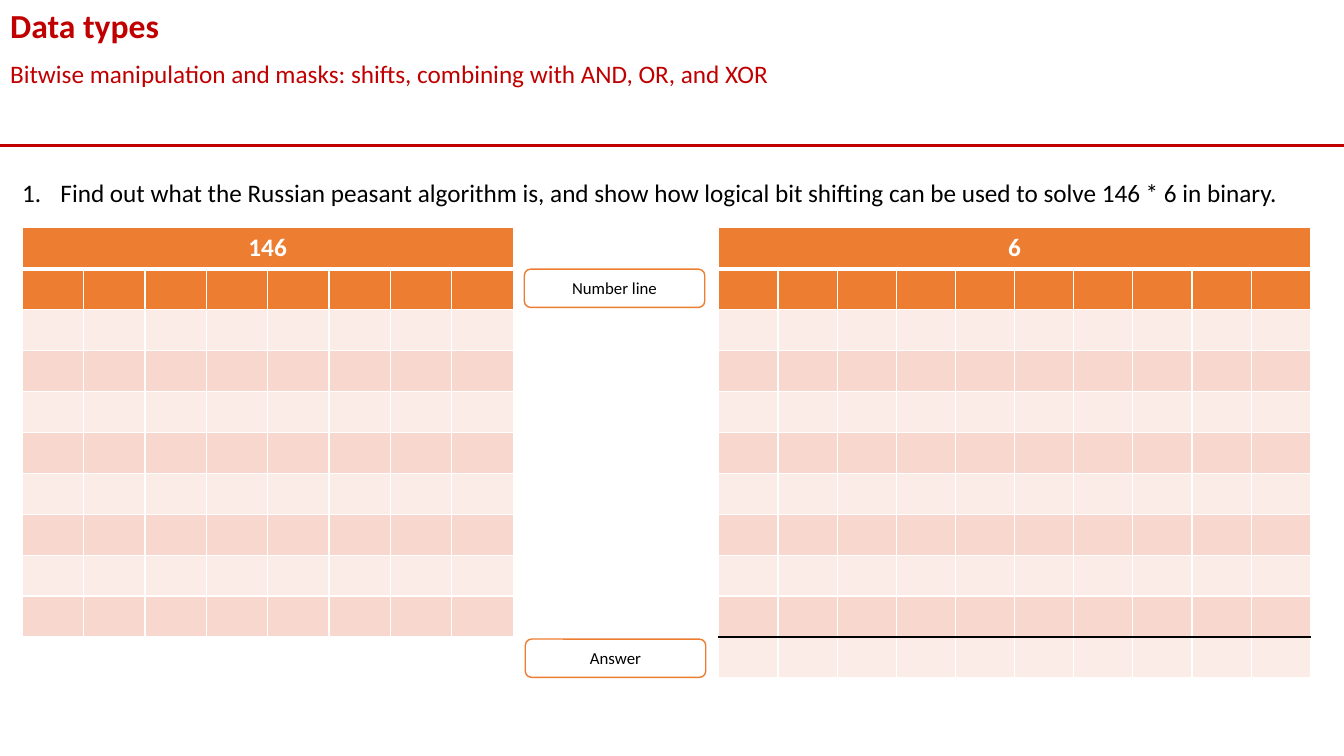
from lxml.etree import SubElement
from pptx import Presentation
from pptx.dml.color import RGBColor
from pptx.enum.shapes import MSO_CONNECTOR, MSO_SHAPE
from pptx.enum.text import MSO_ANCHOR, MSO_AUTO_SIZE, PP_ALIGN
from pptx.oxml.ns import qn
from pptx.util import Inches, Pt

COLORS = {
    "red": "C00000",
    "orange": "ED7D31",
    "light": "FCECE8",
    "dark": "F8D7CE",
    "white": "FFFFFF",
    "black": "000000",
}
FONT = "Calibri"
SLIDE_WIDTH = 13.33
ROW_HEIGHT = 0.406


def color(name):
    return RGBColor.from_string(COLORS[name])


def place(shape, box):
    shape.left, shape.top, shape.width, shape.height = map(Inches, box)


def style_font(paragraph, size, color_name, bold=False):
    paragraph.font.name = FONT
    paragraph.font.size = Pt(size)
    paragraph.font.bold = bold
    paragraph.font.color.rgb = color(color_name)


def fill_placeholder(placeholder, box, text, size, color_name, bold=False, numbered=False):
    place(placeholder, box)
    frame = placeholder.text_frame
    frame.text = text
    frame.word_wrap = True
    frame.auto_size = MSO_AUTO_SIZE.NONE
    frame.vertical_anchor = MSO_ANCHOR.TOP
    paragraph = frame.paragraphs[0]
    paragraph.alignment = PP_ALIGN.LEFT
    paragraph.space_before = Pt(0)
    properties = paragraph._p.get_or_add_pPr()
    indent = Inches(0.38) if numbered else 0
    properties.set("marL", str(indent))
    properties.set("indent", str(-indent))
    if numbered:
        SubElement(properties, qn("a:buFont"), typeface="+mj-lt")
        SubElement(properties, qn("a:buAutoNum"), type="arabicPeriod")
    else:
        SubElement(properties, qn("a:buNone"))
    style_font(paragraph, size, color_name, bold)


def add_header(slide, box):
    left, top, width, height = box
    title, subtitle = slide.shapes.title, slide.placeholders[1]
    fill_placeholder(title, (left, top, width, 0.5), "Data types", 24, "red", bold=True)
    fill_placeholder(
        subtitle, (left, top + 0.53, width, 0.4),
        "Bitwise manipulation and masks: shifts, combining with AND, OR, and XOR", 18, "red")
    rule = slide.shapes.add_connector(
        MSO_CONNECTOR.STRAIGHT, Inches(left), Inches(top + height),
        Inches(left + width), Inches(top + height))
    rule.line.color.rgb = color("red")
    rule.line.width = Pt(2.25)
    SubElement(rule._element.spPr, qn("a:effectLst"))


def set_borders(cell, top=("white", 1), bottom=("white", 1)):
    properties = cell._tc.get_or_add_tcPr()
    sides = {"a:lnL": ("white", 1), "a:lnR": ("white", 1), "a:lnT": top, "a:lnB": bottom}
    for tag, (color_name, width) in sides.items():
        line = SubElement(properties, qn(tag), w=str(Pt(width)))
        fill = SubElement(line, qn("a:solidFill"))
        SubElement(fill, qn("a:srgbClr"), val=COLORS[color_name])


def add_bit_grid(slide, box, heading, row_count, column_count, answer_row=None):
    table = slide.shapes.add_table(row_count, column_count, *map(Inches, box)).table
    for column in table.columns:
        column.width = Inches(box[2] / column_count)
    for row_index, row in enumerate(table.rows):
        row.height = Inches(box[3] / row_count)
        fill_name = "orange" if row_index < 2 else ("light", "dark")[row_index % 2]
        borders = {}
        if row_index == 0:
            borders["bottom"] = ("white", 3)
        elif row_index == 1:
            borders["top"] = ("white", 3)
        elif row_index == answer_row:
            borders["top"] = ("black", 1)
        elif answer_row and row_index == answer_row - 1:
            borders["bottom"] = ("black", 1)
        for cell in row.cells:
            set_borders(cell, **borders)
            cell.fill.solid()
            cell.fill.fore_color.rgb = color(fill_name)
    heading_cell = table.cell(0, 0)
    heading_cell.merge(table.cell(0, column_count - 1))
    heading_cell.text = heading
    paragraph = heading_cell.text_frame.paragraphs[0]
    paragraph.alignment = PP_ALIGN.CENTER
    style_font(paragraph, 18, "white", bold=True)


def add_label(slide, box, text):
    label = slide.shapes.add_shape(MSO_SHAPE.ROUNDED_RECTANGLE, *map(Inches, box))
    label.shadow.inherit = False
    label.fill.solid()
    label.fill.fore_color.rgb = color("white")
    label.line.color.rgb = color("orange")
    label.line.width = Pt(1)
    frame = label.text_frame
    frame.text = text
    frame.vertical_anchor = MSO_ANCHOR.MIDDLE
    paragraph = frame.paragraphs[0]
    paragraph.alignment = PP_ALIGN.CENTER
    style_font(paragraph, 12, "black")


def add_exercise(slide, box):
    left, top, width, height = box
    fill_placeholder(
        slide.placeholders[2], (left, top, width, 0.4),
        "Find out what the Russian peasant algorithm is, and show how logical bit shifting "
        "can be used to solve 146 * 6 in binary.", 18, "black", numbered=True)
    grid_top = top + 0.55
    add_bit_grid(slide, (left + 0.1, grid_top, 4.87, 10 * ROW_HEIGHT), "146", 10, 8)
    add_bit_grid(slide, (left + width - 5.87, grid_top, 5.87, 11 * ROW_HEIGHT),
                 "6", 11, 10, answer_row=10)
    add_label(slide, (left + 5.08, grid_top + 0.41, 1.79, 0.38), "Number line")
    add_label(slide, (left + 5.09, top + height - 0.38, 1.79, 0.38), "Answer")


def main():
    presentation = Presentation()
    presentation.slide_width = Inches(SLIDE_WIDTH)
    presentation.slide_height = Inches(7.5)
    slide = presentation.slides.add_slide(presentation.slide_layouts[3])
    add_header(slide, (0, 0, SLIDE_WIDTH, 1.44))
    add_exercise(slide, (0.12, 1.71, 12.88, 5.01))
    presentation.save("out.pptx")


if __name__ == "__main__":
    main()
